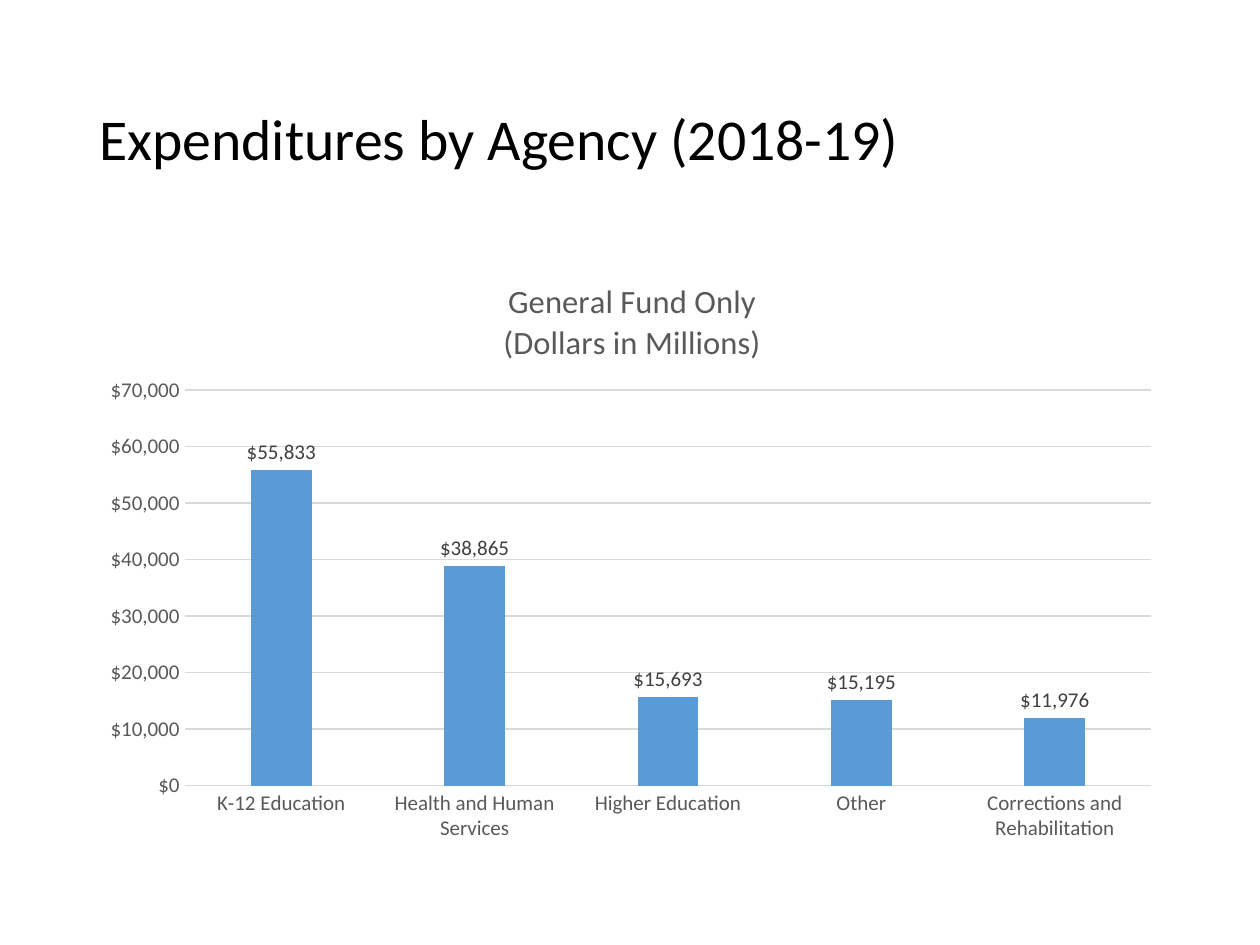
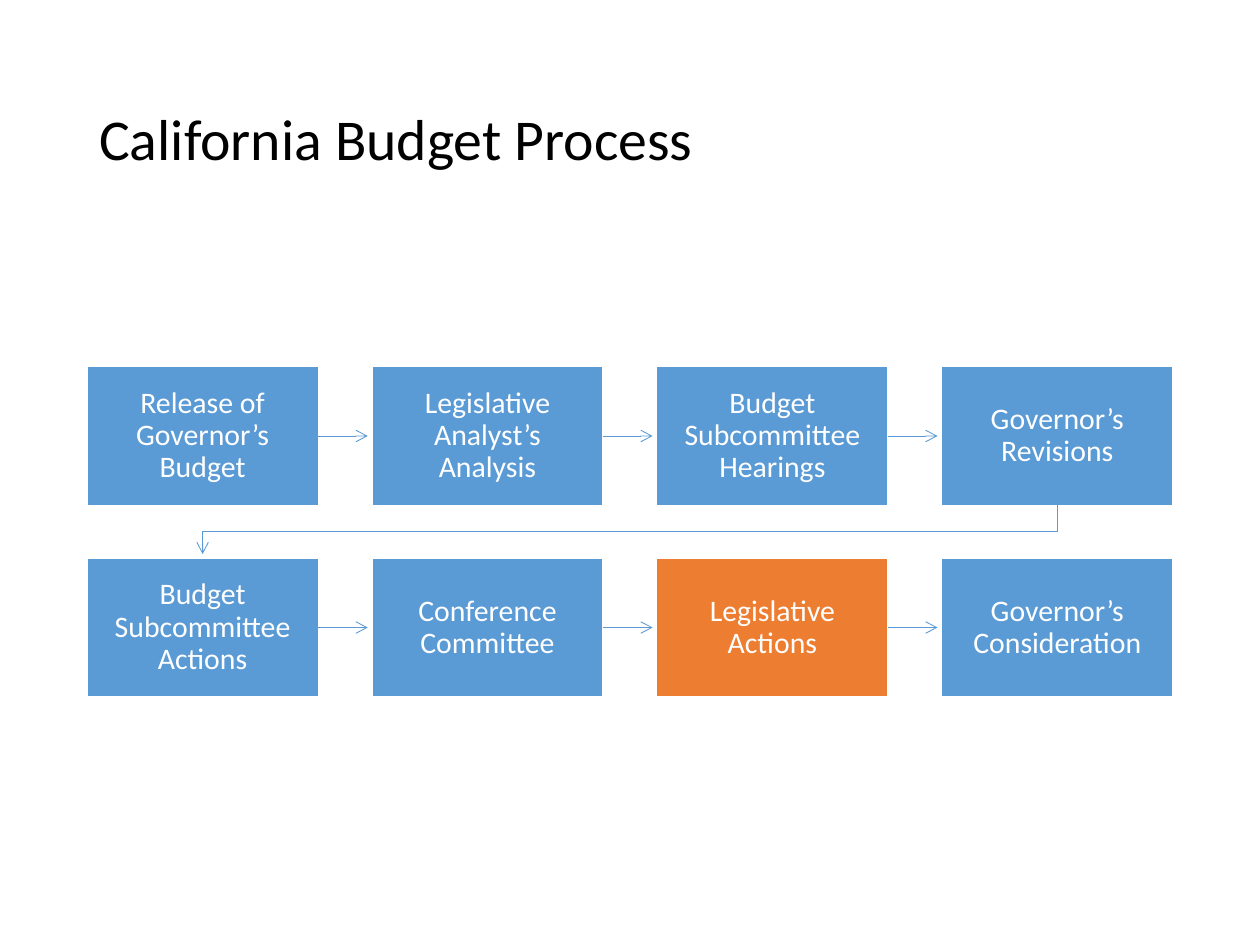
from dataclasses import dataclass
from typing import Any

from lxml.etree import SubElement
from pptx import Presentation
from pptx.chart.data import CategoryChartData
from pptx.dml.color import RGBColor
from pptx.enum.chart import XL_CHART_TYPE as ChartType
from pptx.enum.chart import XL_LABEL_POSITION as LabelPos
from pptx.enum.chart import XL_TICK_MARK as Tick
from pptx.enum.shapes import MSO_CONNECTOR as Connector
from pptx.enum.shapes import MSO_SHAPE as Shape
from pptx.enum.text import MSO_ANCHOR as Anchor
from pptx.enum.text import PP_ALIGN as Align
from pptx.oxml import parse_xml
from pptx.oxml.ns import nsdecls, qn
from pptx.util import Cm, Pt


@dataclass(frozen=True)
class Theme:
    font: str = "Calibri"
    black: str = "000000"
    white: str = "FFFFFF"
    blue: str = "5B9BD5"
    orange: str = "ED7D31"
    axis_gray: str = "595959"
    label_gray: str = "404040"
    grid_gray: str = "D9D9D9"
    title_size: float = 33
    chart_title_size: float = 18.6
    step_size: float = 17
    axis_size: float = 12
    line_spacing: float = 0.9
    left: float = 1.75
    width: float = 21.9


@dataclass(frozen=True)
class Step:
    text: str
    color: str


T = Theme()
DOLLARS = '"$"#,##0'
EXPENDITURES = {
    "K-12 Education": 55833,
    "Health and Human Services": 38865,
    "Higher Education": 15693,
    "Other": 15195,
    "Corrections and Rehabilitation": 11976,
}
STEPS = [
    Step("Release of Governor’s Budget", T.blue),
    Step("Legislative Analyst’s Analysis", T.blue),
    Step("Budget Subcommittee Hearings", T.blue),
    Step("Governor’s Revisions", T.blue),
    Step("Budget Subcommittee Actions", T.blue),
    Step("Conference Committee", T.blue),
    Step("Legislative Actions", T.orange),
    Step("Governor’s Consideration", T.blue),
]
COLUMNS = 4
STEP_W, STEP_H = 4.67, 2.8
STEP_TOP, ROW_PITCH = 7.39, 3.86
COL_PITCH = (T.width - STEP_W) / (COLUMNS - 1)
CLEARANCE = 0.08  # space between an arrow's end and a box


def apply(obj: Any, values: dict[str, Any]) -> None:
    for name, value in values.items():
        setattr(obj, name, value)


def set_font(font: Any, size: float, color: str) -> None:
    apply(font, {"name": T.font, "size": Pt(size), "bold": False})
    font.color.rgb = RGBColor.from_string(color)


def set_line(line: Any, color: str, width: float) -> None:
    line.color.rgb = RGBColor.from_string(color)
    line.width = Pt(width)


def set_fill(fill: Any, color: str) -> None:
    fill.solid()
    fill.fore_color.rgb = RGBColor.from_string(color)


def write(tf: Any, text: str, size: float, color: str, align: Align) -> None:
    apply(tf, {"word_wrap": True, "vertical_anchor": Anchor.MIDDLE})
    p = tf.paragraphs[0]
    apply(p, {"alignment": align, "line_spacing": T.line_spacing})
    r = p.add_run()
    r.text = text
    set_font(r.font, size, color)


def add_titled_slide(prs: Any, title: str) -> Any:
    s = prs.slides.add_slide(prs.slide_layouts[6])
    box = s.shapes.add_textbox(Cm(T.left), Cm(1.02), Cm(T.width), Cm(3.68))
    write(box.text_frame, title, T.title_size, T.black, Align.LEFT)
    return s


def place(element: Any, **fractions: float) -> None:
    """Give a chart part a fixed place, in fractions of the chart's size."""
    layout = element.find(qn("c:layout"))
    if layout is None:
        layout = parse_xml(f"<c:layout {nsdecls('c')}/>")
        text = element.find(qn("c:tx"))
        element.insert(0 if text is None else 1, layout)
    manual = SubElement(layout, qn("c:manualLayout"))
    if "w" in fractions:
        SubElement(manual, qn("c:layoutTarget"), val="inner")
    for side in "xy":
        SubElement(manual, qn(f"c:{side}Mode"), val="edge")
    for name, value in fractions.items():
        SubElement(manual, qn(f"c:{name}"), val=str(value))


def style_axes(chart: Any) -> None:
    values, categories = chart.value_axis, chart.category_axis
    for axis in (values, categories):
        apply(axis, {"major_tick_mark": Tick.NONE, "minor_tick_mark": Tick.NONE})
        set_font(axis.tick_labels.font, T.axis_size, T.axis_gray)
    apply(values, {"minimum_scale": 0, "maximum_scale": 70000, "major_unit": 10000})
    apply(values.tick_labels, {"number_format": DOLLARS, "number_format_is_linked": False})
    values.format.line.fill.background()
    for line in (values.major_gridlines.format.line, categories.format.line):
        set_line(line, T.grid_gray, 0.75)


def add_expenditure_chart(s: Any) -> None:
    data = CategoryChartData(number_format=DOLLARS)
    data.categories = list(EXPENDITURES)
    data.add_series("Series 1", list(EXPENDITURES.values()))
    chart = s.shapes.add_chart(
        ChartType.COLUMN_CLUSTERED, Cm(T.left), Cm(5.08), Cm(T.width), Cm(12.09), data
    ).chart
    chart.has_legend = False
    set_font(chart.font, 10, T.black)

    title = chart.chart_title
    title.text_frame.text = "General Fund Only\n(Dollars in Millions)"
    for p in title.text_frame.paragraphs:
        set_font(p.runs[0].font, T.chart_title_size, T.axis_gray)
    place(title.element if hasattr(title, "element") else title._element, x=0.38, y=0.04)

    plot = chart.plots[0]
    apply(plot, {"gap_width": 219, "overlap": -27, "vary_by_categories": False, "has_data_labels": True})
    set_fill(plot.series[0].format.fill, T.blue)
    labels = plot.data_labels
    apply(labels, {
        "show_value": True,
        "position": LabelPos.OUTSIDE_END,
        "number_format": DOLLARS,
        "number_format_is_linked": False,
    })
    set_font(labels.font, T.axis_size, T.label_gray)
    style_axes(chart)
    plot_area = chart.element.find(".//" + qn("c:plotArea")) if hasattr(chart, "element") \
        else chart._chartSpace.find(".//" + qn("c:plotArea"))
    place(plot_area, x=0.09, y=0.23, w=0.89, h=0.66)


def add_step(s: Any, step: Step, x: float, y: float) -> None:
    box = s.shapes.add_shape(Shape.RECTANGLE, Cm(x), Cm(y), Cm(STEP_W), Cm(STEP_H))
    box.shadow.inherit = False
    set_fill(box.fill, step.color)
    set_line(box.line, T.white, 1)
    tf = box.text_frame
    apply(tf, {f"margin_{side}": Cm(0.33) for side in ("left", "top", "right", "bottom")})
    write(tf, step.text, T.step_size, T.white, Align.CENTER)


def add_arrow(s: Any, *points: tuple[float, float]) -> None:
    """Draw a straight arrow through two points, or a bent one through more."""
    pts = [(Cm(x), Cm(y)) for x, y in points]
    if len(pts) == 2:
        arrow = s.shapes.add_connector(Connector.STRAIGHT, *pts[0], *pts[1])
    else:
        builder = s.shapes.build_freeform(*pts[0])
        builder.add_line_segments(pts[1:], close=False)
        arrow = builder.convert_to_shape()
        arrow.fill.background()
    set_line(arrow.line, T.blue, 0.5)
    SubElement(arrow.get_or_add_ln(), qn("a:tailEnd"), type="arrow")
    SubElement(arrow.element.spPr, qn("a:effectLst"))


def add_budget_process(s: Any) -> None:
    for i, step in enumerate(STEPS):
        row, col = divmod(i, COLUMNS)
        x, y = T.left + col * COL_PITCH, STEP_TOP + row * ROW_PITCH
        add_step(s, step, x, y)
        if i == len(STEPS) - 1:
            continue
        if col < COLUMNS - 1:
            middle = y + STEP_H / 2
            add_arrow(s, (x + STEP_W, middle), (x + COL_PITCH - CLEARANCE, middle))
        else:
            start, end = x + STEP_W / 2, T.left + STEP_W / 2
            turn = y + (STEP_H + ROW_PITCH) / 2
            add_arrow(s, (start, y + STEP_H), (start, turn), (end, turn),
                      (end, y + ROW_PITCH - CLEARANCE))


def main() -> None:
    prs = Presentation()
    apply(prs, {"slide_width": Cm(25.4), "slide_height": Cm(19.05)})
    add_expenditure_chart(add_titled_slide(prs, "Expenditures by Agency (2018-19)"))
    add_budget_process(add_titled_slide(prs, "California Budget Process"))
    prs.save("out.pptx")


if __name__ == "__main__":
    main()
